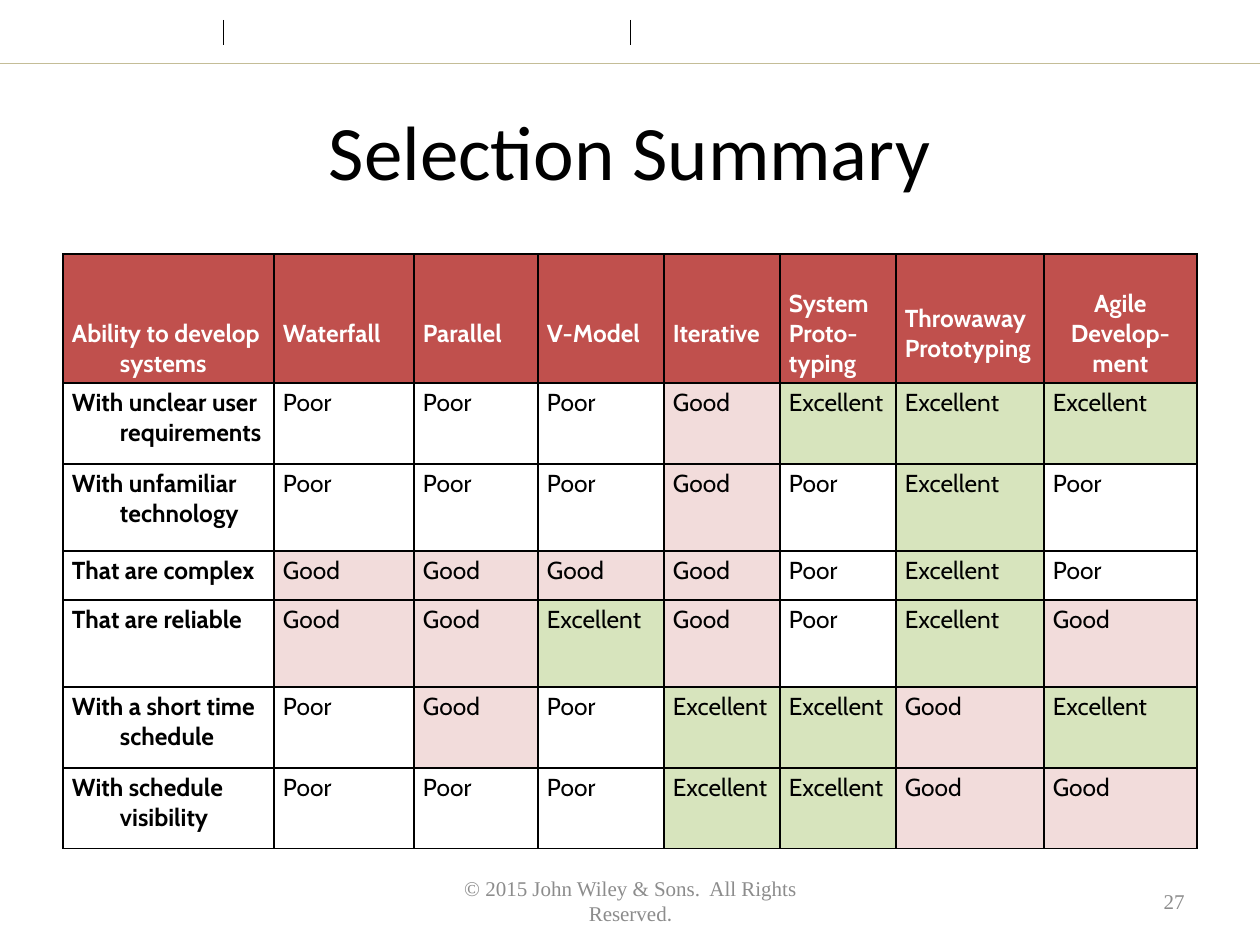
from lxml import etree
from pptx import Presentation, util as u
from pptx.dml.color import RGBColor
from pptx.enum import shapes, text
from pptx.oxml.ns import qn

SCALE = 914400 / 126
HEX = {"ink": "000000", "rule": "C4BD97", "grey": "8C8C8C", "head": "C0504D",
       "white": "FFFFFF", "Good": "F2DCDB", "Excellent": "D7E4BD"}
COLS = [211, 140, 124, 126, 116, 116, 148, 153]
ROWS = [129, 81, 87, 49, 87, 81, 81]
LINE, HANG = 30, 48

# Each heading: its lines, and how many line heights it sits below the top
HEADS = [(["Ability to develop systems"], 2), (["Waterfall"], 1), (["Parallel"], 1),
         (["V-Model"], 1), (["Iterative"], 1), (["System", "Proto-", "typing"], 1),
         (["Throwaway", "Prototyping"], 1), (["Agile", "Develop-", "ment"], 1)]
RATES = {"P": "Poor", "G": "Good", "E": "Excellent"}
NEEDS = [("With unclear user requirements", "PPPGEEE"),
         ("With unfamiliar technology", "PPPGPEP"),
         ("That are complex", "GGGGPEP"),
         ("That are reliable", "GGEGPEG"),
         ("With a short time schedule", "PGPEEGE"),
         ("With schedule visibility", "PPPEEGG")]


def px(n):
    return u.Emu(round(n * SCALE))


def rgb(name):
    return RGBColor.from_string(HEX[name])


def style(font, color, **form):
    for key, val in form.items():
        setattr(font, key, val)
    font.color.rgb = rgb(color)


def label(slide, box, runs, align, size, color):
    """Text box with one paragraph of (words, font) runs."""
    frame = slide.shapes.add_textbox(*map(px, box)).text_frame
    frame.word_wrap = True
    frame.vertical_anchor = text.MSO_ANCHOR.MIDDLE
    para = frame.paragraphs[0]
    para.alignment = align
    for words, name in runs:
        run = para.add_run()
        run.text = words
        style(run.font, color, size=u.Pt(size), name=name)


def rule(slide, ends, color, width):
    line = slide.shapes.add_connector(shapes.MSO_CONNECTOR.STRAIGHT, *map(px, ends))
    line.line.color.rgb = rgb(color)
    line.line.width = u.Pt(width)
    etree.SubElement(line._element.spPr, qn("a:effectLst"))


def band(slide, box):
    """Top strip: a base line and two upright ticks."""
    left, top, width, height = box
    base = top + height
    rule(slide, (left, base, left + width, base), "rule", 0.25)
    for x in (223, 630):
        rule(slide, (left + x, top + 20, left + x, top + 45), "ink", 0.5)


def edge(cell):
    """Black one-point border on all four sides."""
    props = cell._tc.get_or_add_tcPr()
    for i, side in enumerate(("lnL", "lnR", "lnT", "lnB")):
        line = etree.Element(qn("a:" + side), w=str(u.Pt(1)))
        fill = etree.SubElement(line, qn("a:solidFill"))
        etree.SubElement(fill, qn("a:srgbClr"), val=HEX["ink"])
        props.insert(i, line)


def write(cell, lines, fill, color, bold, drop=0, align=None, anchor=text.MSO_ANCHOR.TOP):
    form = {"margin_left": px(9), "margin_right": px(9), "margin_bottom": px(5),
            "margin_top": px(5 + drop * LINE), "vertical_anchor": anchor}
    for key, val in form.items():
        setattr(cell, key, val)
    edge(cell)
    if fill in HEX:
        cell.fill.solid()
        cell.fill.fore_color.rgb = rgb(fill)
    else:
        cell.fill.background()
    cell.text_frame.text = "\n".join(lines)
    for para in cell.text_frame.paragraphs:
        props = para._p.get_or_add_pPr()
        props.set("marL", str(px(HANG)))
        props.set("indent", str(-px(HANG)))
        para.alignment = align
        style(para.runs[0].font, color, size=u.Pt(14), name="Cabin", bold=bold)


def matrix(slide, left, top):
    """Ratings table: a heading row, then one row for each need."""
    box = map(px, (left, top, sum(COLS), sum(ROWS)))
    table = slide.shapes.add_table(len(ROWS), len(COLS), *box).table
    table.first_row = table.horz_banding = False
    for col, width in zip(table.columns, COLS):
        col.width = px(width)
    for row, height in zip(table.rows, ROWS):
        row.height = px(height)
    for c, (lines, drop) in enumerate(HEADS):
        align = text.PP_ALIGN.CENTER if c == len(COLS) - 1 else None
        write(table.cell(0, c), lines, "head", "white", True, drop, align,
              text.MSO_ANCHOR.MIDDLE)
    for r, (need, marks) in enumerate(NEEDS, 1):
        write(table.cell(r, 0), [need], None, "ink", True)
        for c, mark in enumerate(marks, 1):
            rate = RATES[mark]
            write(table.cell(r, c), [rate], rate, "ink", False)


def footer(slide, top, height):
    """Copyright line and page number."""
    serif = "Times New Roman"
    label(slide, (431, top, 399, height),
          [("© 2015 John Wiley & Sons.  All Rights Reserved", serif), (".", "Calibri")],
          text.PP_ALIGN.CENTER, 12, "grey")
    label(slide, (903, top, 294, height), [("27", serif)], text.PP_ALIGN.RIGHT, 12, "grey")


def main():
    deck = Presentation()
    deck.slide_width, deck.slide_height = px(1260), px(945)
    slide = deck.slides.add_slide(deck.slide_layouts[6])
    band(slide, (0, 0, 1260, 63))
    label(slide, (63, 63, 1134, 174), [("Selection Summary", "Calibri")],
          text.PP_ALIGN.CENTER, 44, "ink")
    matrix(slide, 63, 254)
    footer(slide, 876, 50)
    deck.save("out.pptx")


if __name__ == "__main__":
    main()
